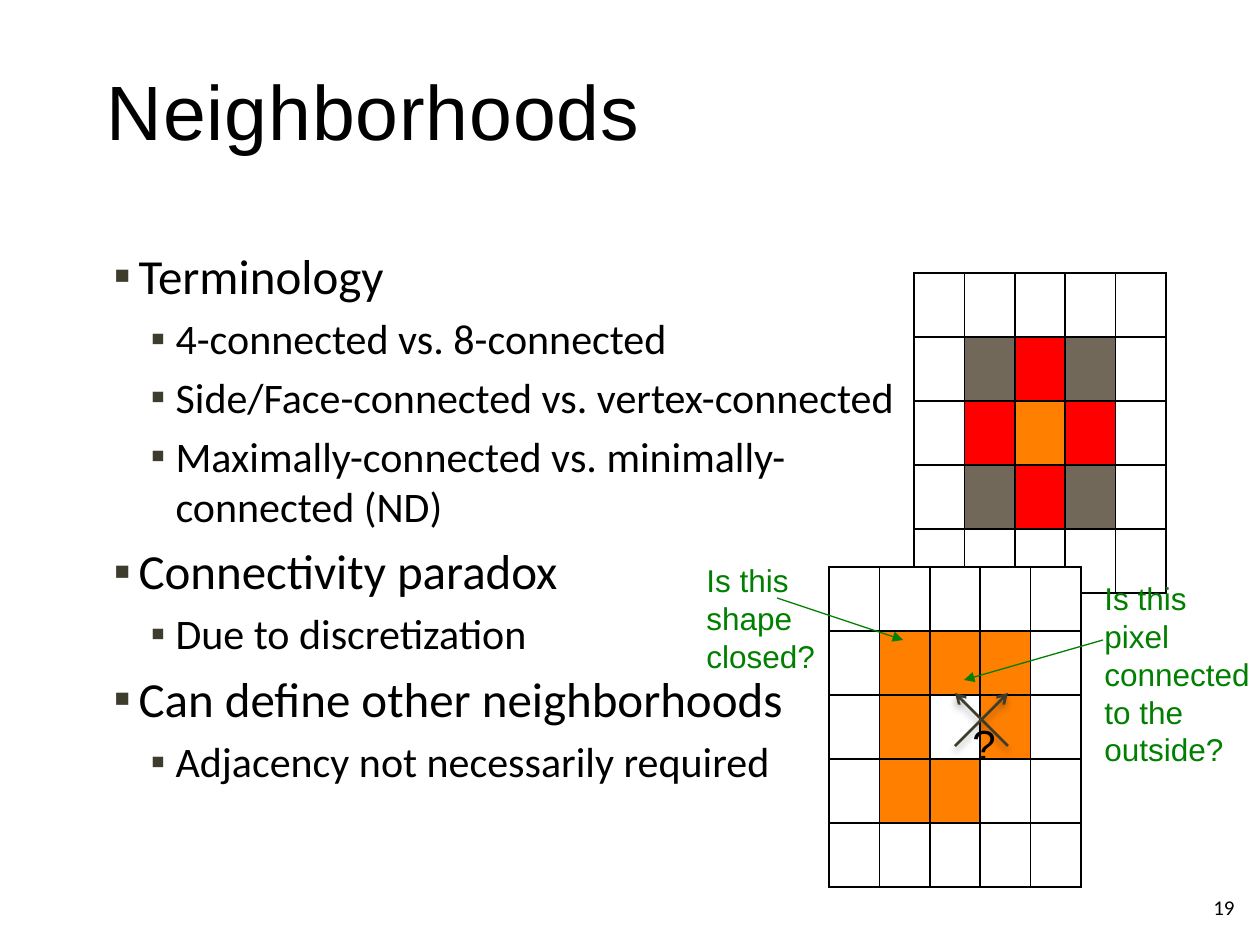
from lxml import etree
from pptx import Presentation
from pptx.dml.color import RGBColor
from pptx.enum.shapes import MSO_CONNECTOR
from pptx.enum.text import MSO_ANCHOR, MSO_AUTO_SIZE, PP_ALIGN
from pptx.oxml import parse_xml
from pptx.oxml.ns import qn
from pptx.util import Emu, Pt

STRAIGHT = MSO_CONNECTOR.STRAIGHT
MIDDLE = MSO_ANCHOR.MIDDLE
TOP = MSO_ANCHOR.TOP
NO_FIT = MSO_AUTO_SIZE.NONE
LEFT = PP_ALIGN.LEFT
RIGHT = PP_ALIGN.RIGHT
PX_PER_INCH = 126
NAMESPACE = 'xmlns:a="http://schemas.openxmlformats.org/drawingml/2006/main"'

TOPICS = [
    (0, "Terminology"),
    (1, "4-connected vs. 8-connected"),
    (1, "Side/Face-connected vs. vertex-connected"),
    (1, "Maximally-connected vs. minimally-connected (ND)"),
    (0, "Connectivity paradox"),
    (1, "Due to discretization"),
    (0, "Can define other neighborhoods"),
    (1, "Adjacency not necessarily required"),
]
NEIGHBOR_MAP = [".....", ".grg.", ".ror.", ".grg.", "....."]
SHAPE_MAP = [".....", ".ooo.", ".o.o.", ".oo..", "....."]
PIXEL_COLORS = {".": "FFFFFF", "g": "71685A", "r": "FF0000", "o": "FF8000"}


def px(length):
    return Emu(round(length * 914400 / PX_PER_INCH))


def color(hex_code):
    return RGBColor.from_string(hex_code)


def write(paragraph, text, font="Arial", size=18, ink="000000", align=LEFT, spacing=None):
    paragraph.alignment = align
    run = paragraph.add_run()
    run.text = text
    run.font.name = font
    run.font.size = Pt(size)
    run.font.color.rgb = color(ink)
    if spacing is not None:
        run._r.get_or_add_rPr().set("spc", str(spacing))


class SlideBuilder:
    ink = "000000"
    dark = "3E3D2D"
    green = "007F01"
    body_font = "Calibri"

    def __init__(self, slide):
        self.slide = slide

    def place(self, shape, left, top, width, height):
        shape.left, shape.top = px(left), px(top)
        shape.width, shape.height = px(width), px(height)

    def title(self, text, *box):
        heading = self.slide.shapes.title
        self.place(heading, *box)
        heading.text_frame.vertical_anchor = MIDDLE
        write(heading.text_frame.paragraphs[0], text, size=44, spacing=50)

    def bullets(self, topics, *box):
        body = self.slide.placeholders[1]
        self.place(body, *box)
        frame = body.text_frame
        frame.auto_size = NO_FIT
        for index, (level, text) in enumerate(topics):
            paragraph = frame.paragraphs[0] if index == 0 else frame.add_paragraph()
            paragraph.level = level
            properties = paragraph._p.get_or_add_pPr()
            properties.set("marL", str(px(69 if level else 32)))
            properties.set("indent", str(-px(25)))
            bullet_color = etree.SubElement(properties, qn("a:buClr"))
            etree.SubElement(bullet_color, qn("a:srgbClr"), val=self.dark)
            etree.SubElement(properties, qn("a:buChar"), char="▪")
            if index == 0:
                paragraph.space_before = Pt(0)
            write(paragraph, text, font=self.body_font, size=24 if level else 28)

    def label(self, lines, *box, anchor=TOP, **text_format):
        textbox = self.slide.shapes.add_textbox(*map(px, box))
        frame = textbox.text_frame
        frame.word_wrap = False
        frame.vertical_anchor = anchor
        for index, line in enumerate(lines):
            paragraph = frame.paragraphs[0] if index == 0 else frame.add_paragraph()
            write(paragraph, line, **text_format)

    def pixel_grid(self, rows, left, top, column_width=50.4, row_height=64):
        count = len(rows[0])
        grid = self.slide.shapes.add_table(
            len(rows), count, px(left), px(top),
            px(count * column_width), px(len(rows) * row_height)).table
        for column in grid.columns:
            column.width = px(column_width)
        for row, pattern in zip(grid.rows, rows):
            row.height = px(row_height)
            for cell, key in zip(row.cells, pattern):
                self.pixel(cell, PIXEL_COLORS[key])

    def pixel(self, cell, fill):
        properties = cell._tc.get_or_add_tcPr()
        for side in ("lnL", "lnR", "lnT", "lnB"):
            properties.append(parse_xml(
                f'<a:{side} {NAMESPACE} w="12700"><a:solidFill>'
                f'<a:srgbClr val="{self.ink}"/></a:solidFill></a:{side}>'))
        cell.fill.solid()
        cell.fill.fore_color.rgb = color(fill)

    def arrow(self, start, end, ink, width, head, shadow=False):
        connector = self.slide.shapes.add_connector(STRAIGHT, *map(px, start + end))
        connector.line.color.rgb = color(ink)
        connector.line.width = Pt(width)
        etree.SubElement(connector.line._get_or_add_ln(), qn("a:tailEnd"), type=head)
        effects = etree.SubElement(connector._element.spPr, qn("a:effectLst"))
        if shadow:
            effects.append(parse_xml(
                f'<a:outerShdw {NAMESPACE} blurRad="50800" dist="38100" dir="5400000" '
                f'rotWithShape="0"><a:srgbClr val="{self.ink}">'
                '<a:alpha val="28000"/></a:srgbClr></a:outerShdw>'))


def main():
    deck = Presentation()
    deck.slide_width, deck.slide_height = px(1260), px(945)
    builder = SlideBuilder(deck.slides.add_slide(deck.slide_layouts[1]))

    builder.title("Neighborhoods", 94, 32, 1071, 156)
    builder.bullets(TOPICS, 94, 239, 882, 630)
    builder.label(["19"], 1121, 882, 126, 50, anchor=MIDDLE,
                  font=builder.body_font, size=12, align=RIGHT)

    builder.pixel_grid(NEIGHBOR_MAP, 914, 273)
    builder.pixel_grid(SHAPE_MAP, 829, 567)

    for start, end in [((1008, 746), (955, 693)), ((955, 746), (1008, 693))]:
        builder.arrow(start, end, builder.dark, 1.5, "arrow", shadow=True)
    builder.label(["?"], 960, 712, 49, 63, size=24)

    builder.label(["Is this", "pixel", "connected", "to the", "outside?"],
                  1092, 573, 173, 204, ink=builder.green)
    builder.arrow((1103, 640), (964, 680), builder.green, 0.75, "triangle")
    builder.label(["Is this", "shape", "closed?"], 694, 555, 135, 127, ink=builder.green)
    builder.arrow((777, 598), (903, 640), builder.green, 0.75, "triangle")

    deck.save("out.pptx")


if __name__ == "__main__":
    main()
